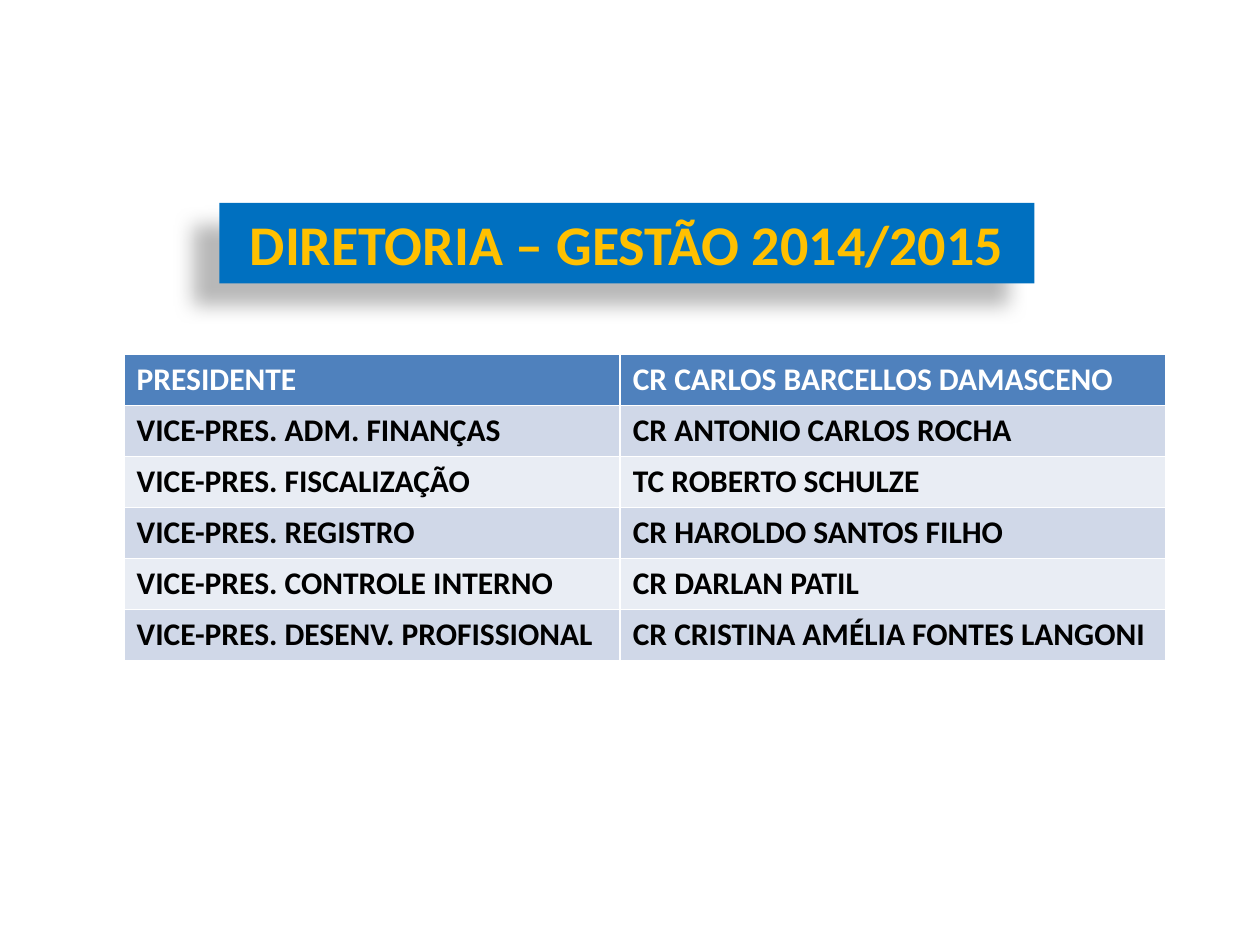
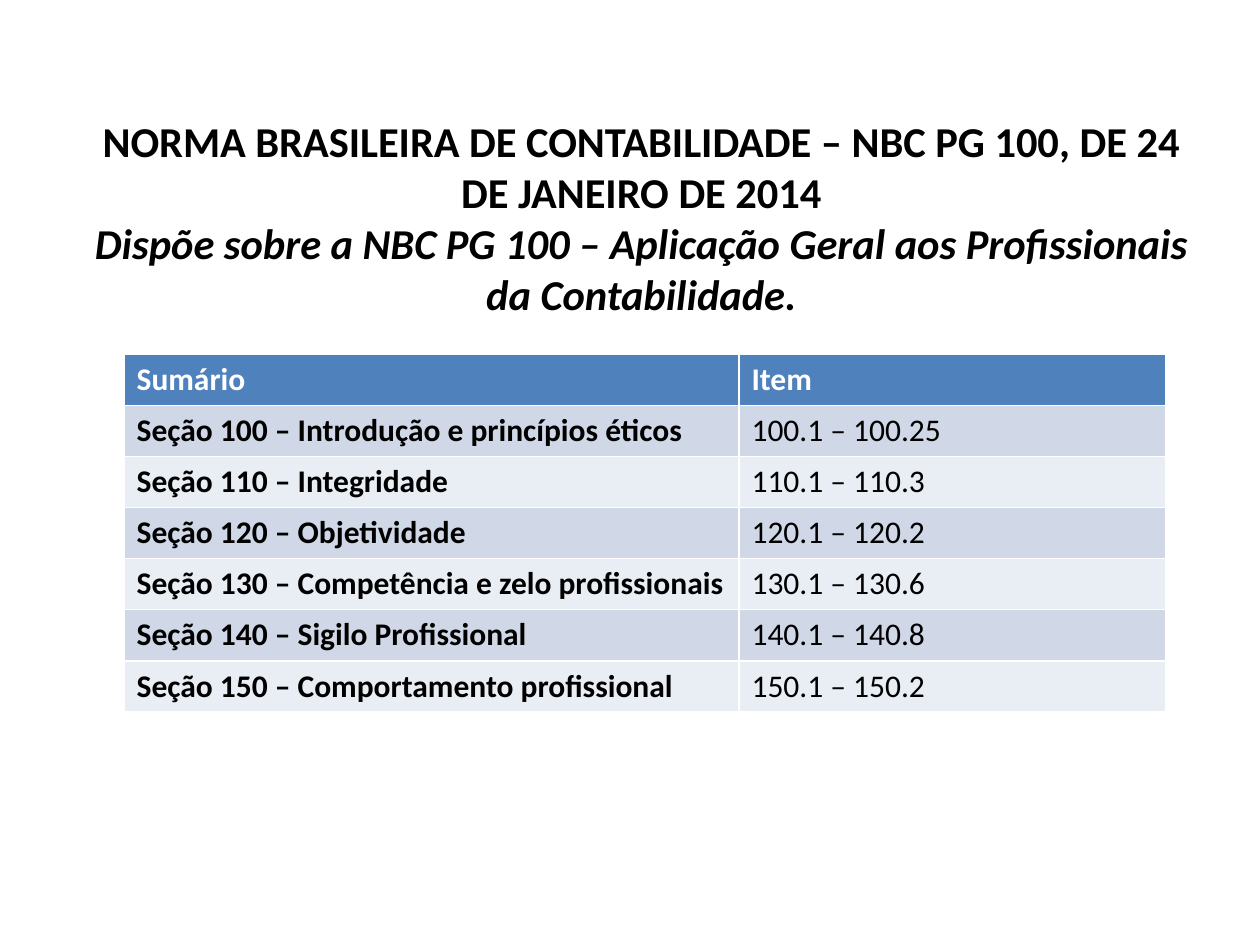
from dataclasses import dataclass

from lxml.etree import SubElement
from pptx import Presentation
from pptx.dml.color import RGBColor
from pptx.enum.text import MSO_ANCHOR, MSO_AUTO_SIZE, PP_ALIGN
from pptx.oxml.ns import qn
from pptx.shapes.placeholder import SlidePlaceholder
from pptx.slide import Slide
from pptx.text.text import _Paragraph
from pptx.util import Pt

# Shared look
FONT = "Calibri"
WHITE = RGBColor(0xFF, 0xFF, 0xFF)
BLACK = RGBColor(0x00, 0x00, 0x00)
BANNER_BLUE = RGBColor(0x00, 0x70, 0xC0)
GOLD = RGBColor(0xFF, 0xC0, 0x00)
HEADER_BLUE = RGBColor(0x4F, 0x81, 0xBD)
BANDS = (RGBColor(0xD0, 0xD8, 0xE8), RGBColor(0xE9, 0xED, 0xF4))
TABLE_LEFT, TABLE_TOP, TABLE_WIDTH, ROW_HEIGHT = 70.9, 202.4, 595.3, 29.2


@dataclass(frozen=True)
class TitleBox:
    left: float
    top: float
    width: float
    height: float
    size: float
    color: RGBColor
    lines: tuple[tuple[str, bool], ...]  # text, italic
    wrap: bool = True


@dataclass(frozen=True)
class TableContent:
    first_width: float
    rows: tuple[tuple[str, str], ...]
    bold_second: bool


BOARD_TITLE = TitleBox(125.3, 115.9, 465.8, 46.1, 32, GOLD,
                       (("DIRETORIA – GESTÃO 2014/2015", False),), wrap=False)
BOARD = TableContent(283.5, (
    ("PRESIDENTE", "CR CARLOS BARCELLOS DAMASCENO"),
    ("VICE-PRES. ADM. FINANÇAS", "CR ANTONIO CARLOS ROCHA"),
    ("VICE-PRES. FISCALIZAÇÃO", "TC ROBERTO SCHULZE"),
    ("VICE-PRES. REGISTRO", "CR HAROLDO SANTOS FILHO"),
    ("VICE-PRES. CONTROLE INTERNO", "CR DARLAN PATIL"),
    ("VICE-PRES. DESENV. PROFISSIONAL", "CR CRISTINA AMÉLIA FONTES LANGONI"),
), bold_second=True)

STANDARD_TITLE = TitleBox(42.5, 65.5, 648, 117, 24.3, BLACK, (
    ("NORMA BRASILEIRA DE CONTABILIDADE – NBC PG 100, DE 24 DE JANEIRO DE 2014", False),
    ("Dispõe sobre a NBC PG 100 – Aplicação Geral aos Profissionais da Contabilidade.", True),
))
STANDARD = TableContent(351.4, (
    ("Sumário", "Item"),
    ("Seção 100 – Introdução e princípios éticos", "100.1 – 100.25"),
    ("Seção 110 – Integridade", "110.1 – 110.3"),
    ("Seção 120 – Objetividade", "120.1 – 120.2"),
    ("Seção 130 – Competência e zelo profissionais", "130.1 – 130.6"),
    ("Seção 140 – Sigilo Profissional", "140.1 – 140.8"),
    ("Seção 150 – Comportamento profissional", "150.1 – 150.2"),
), bold_second=False)


def write(para: _Paragraph, text: str, *, size: float = 18, color: RGBColor = BLACK,
          bold: bool = True, italic: bool = False,
          align: PP_ALIGN = PP_ALIGN.LEFT) -> None:
    para.alignment = align
    span = para.add_run()
    span.text = text
    font = span.font
    font.name, font.size, font.color.rgb = FONT, Pt(size), color
    font.bold, font.italic = bold, italic


def place_title(page: Slide, title: TitleBox) -> SlidePlaceholder:
    box = page.shapes.title
    box.left, box.top = Pt(title.left), Pt(title.top)
    box.width, box.height = Pt(title.width), Pt(title.height)
    frame = box.text_frame
    frame.word_wrap = title.wrap
    frame.auto_size = MSO_AUTO_SIZE.NONE
    frame.vertical_anchor = MSO_ANCHOR.MIDDLE
    frame.margin_top = frame.margin_bottom = 0
    for index, (text, italic) in enumerate(title.lines):
        para = frame.add_paragraph() if index else frame.paragraphs[0]
        write(para, text, size=title.size, color=title.color, italic=italic,
              align=PP_ALIGN.CENTER)
    return box


def make_banner(box: SlidePlaceholder) -> None:
    box.fill.solid()
    box.fill.fore_color.rgb = BANNER_BLUE
    # Soft shadow towards the lower left
    effects = SubElement(box._element.spPr, qn("a:effectLst"))
    shadow = SubElement(effects, qn("a:outerShdw"), blurRad=str(Pt(11.8)),
                        dist=str(Pt(19.7)), dir=str(141 * 60000),
                        algn="tl", rotWithShape="0")
    tint = SubElement(shadow, qn("a:srgbClr"), val=str(BLACK))
    SubElement(tint, qn("a:alpha"), val="28000")


def place_table(page: Slide, content: TableContent) -> None:
    count = len(content.rows)
    # The default table style supplies the white rules
    table = page.shapes.add_table(count, 2, Pt(TABLE_LEFT), Pt(TABLE_TOP),
                                  Pt(TABLE_WIDTH), Pt(ROW_HEIGHT * count)).table
    table.columns[0].width = Pt(content.first_width)
    table.columns[1].width = Pt(TABLE_WIDTH - content.first_width)
    for row, texts in enumerate(content.rows):
        table.rows[row].height = Pt(ROW_HEIGHT)
        header = row == 0
        for column, text in enumerate(texts):
            cell = table.cell(row, column)
            cell.fill.solid()
            cell.fill.fore_color.rgb = HEADER_BLUE if header else BANDS[(row - 1) % 2]
            write(cell.text_frame.paragraphs[0], text,
                  color=WHITE if header else BLACK,
                  bold=header or column == 0 or content.bold_second)


def main() -> None:
    deck = Presentation()
    deck.slide_width, deck.slide_height = Pt(720), Pt(540)
    title_only = deck.slide_layouts.get_by_name("Title Only")

    # Board of directors
    page = deck.slides.add_slide(title_only)
    make_banner(place_title(page, BOARD_TITLE))
    place_table(page, BOARD)

    # Accounting standard summary
    page = deck.slides.add_slide(title_only)
    place_title(page, STANDARD_TITLE)
    place_table(page, STANDARD)

    deck.save("out.pptx")


if __name__ == "__main__":
    main()
